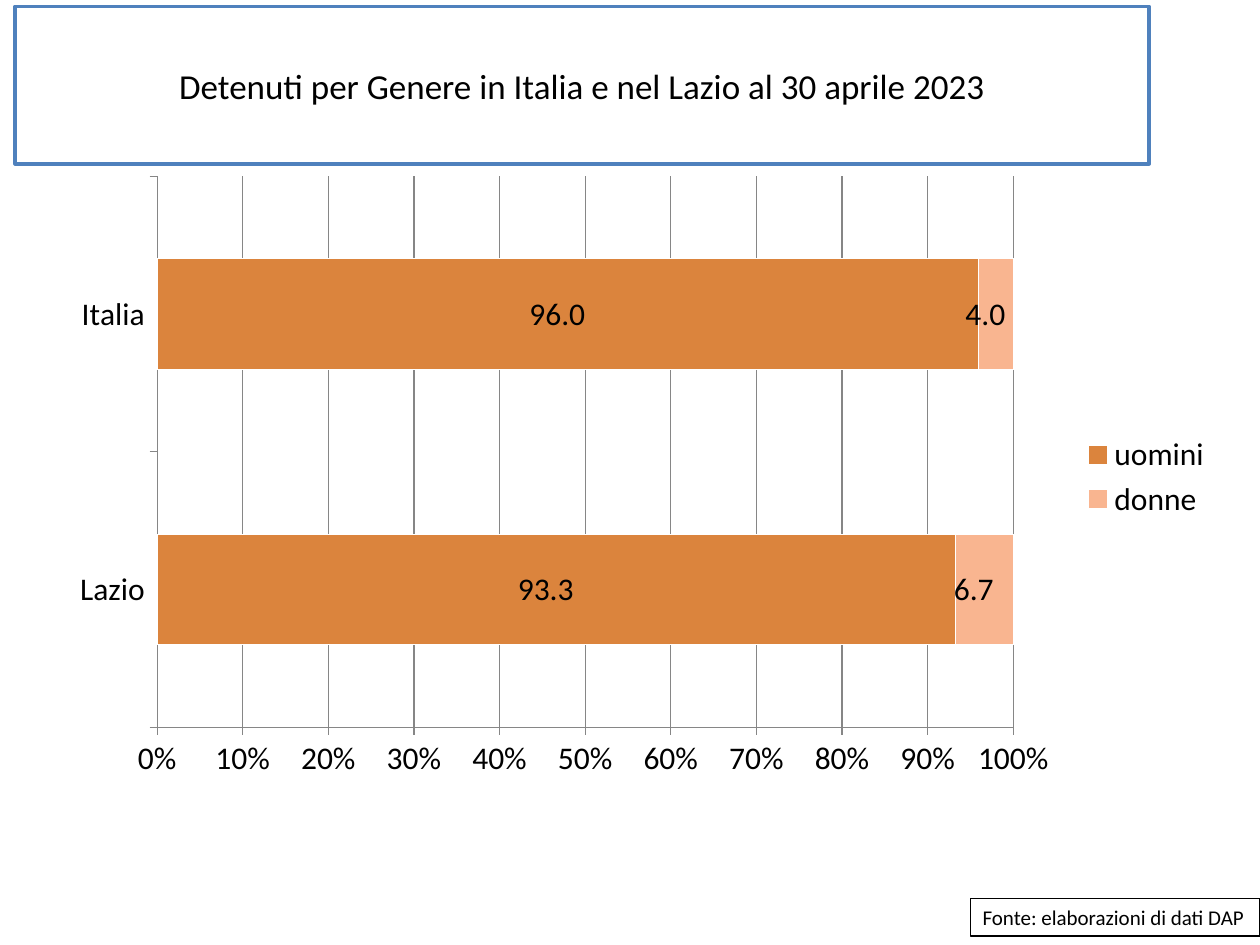
"""Build a slide with a 100% stacked bar chart of detainees by gender."""
from lxml import etree
from pptx import Presentation
from pptx.chart.data import CategoryChartData
from pptx.dml.color import RGBColor
from pptx.enum.chart import XL_CHART_TYPE, XL_LABEL_POSITION, XL_LEGEND_POSITION, XL_TICK_MARK
from pptx.enum.text import MSO_ANCHOR, PP_ALIGN
from pptx.oxml import parse_xml
from pptx.oxml.ns import nsdecls
from pptx.util import Inches, Pt

BAR = XL_CHART_TYPE.BAR_STACKED_100
CENTER_LABEL = XL_LABEL_POSITION.CENTER
LEGEND_RIGHT = XL_LEGEND_POSITION.RIGHT
TICK_OUTSIDE = XL_TICK_MARK.OUTSIDE
MIDDLE = MSO_ANCHOR.MIDDLE
CENTER, LEFT = PP_ALIGN.CENTER, PP_ALIGN.LEFT
FONT = "Calibri"
LABEL_FORMAT = r"_-* #,##0.0\ _€_-;\-* #,##0.0\ _€_-"


def color(hex_value):
    return RGBColor.from_string(hex_value)


def write_box(shape, text, size, align, border, border_width, wrap):
    shape.fill.solid()
    shape.fill.fore_color.rgb = color("FFFFFF")
    shape.line.color.rgb = color(border)
    shape.line.width = Pt(border_width)
    frame = shape.text_frame
    frame.word_wrap = wrap
    frame.vertical_anchor = MIDDLE
    paragraph = frame.paragraphs[0]
    paragraph.alignment = align
    run = paragraph.add_run()
    run.text = text
    run.font.name = FONT
    run.font.size = Pt(size)
    run.font.color.rgb = color("000000")


presentation = Presentation()
presentation.slide_width = Inches(10)
presentation.slide_height = Inches(7.5)
slide = presentation.slides.add_slide(presentation.slide_layouts[5])

title = slide.shapes.title
title.left, title.top, title.width, title.height = Inches(0.12), Inches(0.05), Inches(9), Inches(1.25)
write_box(title, "Detenuti per Genere in Italia e nel Lazio al 30 aprile 2023",
          size=20, align=CENTER, border="4F81BD", border_width=2, wrap=True)

source_box = slide.shapes.add_textbox(Inches(7.7), Inches(7.13), Inches(2.3), Inches(0.3))
write_box(source_box, "Fonte: elaborazioni di dati DAP",
          size=12, align=LEFT, border="000000", border_width=0.75, wrap=False)

chart_data = CategoryChartData(number_format="0.0")
chart_data.categories = ["Lazio", "Italia"]
chart_data.add_series("uomini", [93.3, 96])
chart_data.add_series("donne", [6.7, 4])
chart = slide.shapes.add_chart(
    BAR, Inches(0.45), Inches(1.3), Inches(9.27), Inches(4.97), chart_data).chart
chart.has_title = False
chart.font.name = FONT
chart.font.size = Pt(18)
chart.font.color.rgb = color("000000")
chart.has_legend = True
chart.legend.position = LEGEND_RIGHT
chart.legend.include_in_layout = False

for axis in (chart.category_axis, chart.value_axis):
    axis.major_tick_mark = TICK_OUTSIDE
    axis.format.line.color.rgb = color("868686")
chart.value_axis.minimum_scale = 0
chart.value_axis.maximum_scale = 1
chart.value_axis.major_unit = 0.1
chart.value_axis.tick_labels.number_format = "0%"
chart.value_axis.tick_labels.number_format_is_linked = False
chart.value_axis.has_major_gridlines = True
chart.value_axis.major_gridlines.format.line.color.rgb = color("868686")

plot = chart.plots[0]
plot.gap_width = 150
plot.overlap = 100
plot.vary_by_categories = False
for series, fill in zip(plot.series, ("DB843D", "F9B590")):
    series.format.fill.solid()
    series.format.fill.fore_color.rgb = color(fill)
    series.format.line.color.rgb = color("FFFFFF")
    labels = series.data_labels
    labels.show_value = True
    labels.position = CENTER_LABEL
    labels.number_format = LABEL_FORMAT
    labels.number_format_is_linked = False

plot_area = chart.element.chart.plotArea
for old_layout in plot_area.findall("{*}layout"):
    plot_area.remove(old_layout)
layout = parse_xml(f"<c:layout {nsdecls('c')}><c:manualLayout/></c:layout>")
for tag, value in (("layoutTarget", "inner"), ("xMode", "edge"), ("yMode", "edge"),
                   ("x", "0.086"), ("y", "0.02"), ("w", "0.733"), ("h", "0.88")):
    namespace = etree.QName(layout).namespace
    etree.SubElement(layout[0], f"{{{namespace}}}{tag}").set("val", value)
plot_area.insert(0, layout)

presentation.save("out.pptx")
